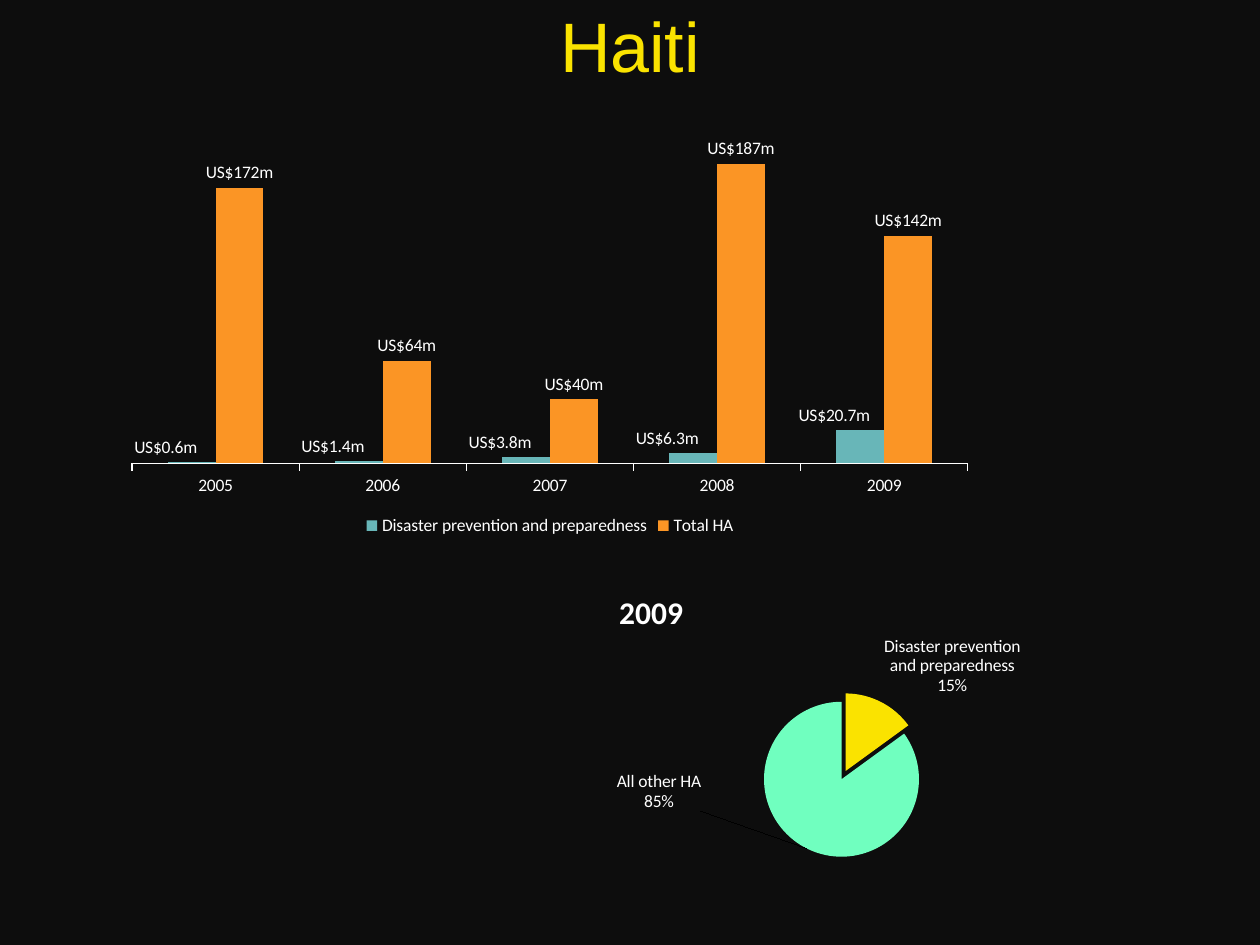
import dataclasses

import pptx
import pptx.chart.data
import pptx.dml.color
import pptx.enum.chart
import pptx.enum.text
import pptx.oxml
import pptx.oxml.ns
import pptx.util


@dataclasses.dataclass(frozen=True)
class Theme:
    background: str = "0D0D0D"
    text: str = "FFFFFF"
    accent: str = "FAE300"
    prevention: str = "68B6B8"
    total: str = "FB9525"
    other: str = "70FFBF"
    heading_font: str = "Arial"
    chart_font: str = "Calibri"
    heading_size: int = 40
    chart_title_size: int = 18
    label_size: int = 10


def rgb(code):
    return pptx.dml.color.RGBColor.from_string(code)


def paint(element, color):
    element.format.fill.solid()
    element.format.fill.fore_color.rgb = rgb(color)


def layout_xml(x, y, size=None, absolute=True):
    """Manual chart layout, in shares of the chart or as an offset."""
    parts = [("layoutTarget", "inner")] if size else []
    if absolute:
        parts += [("xMode", "edge"), ("yMode", "edge")]
    parts += [("x", x), ("y", y)]
    if size:
        parts += [("w", size[0]), ("h", size[1])]
    body = "".join(f'<c:{tag} val="{value}"/>' for tag, value in parts)
    return pptx.oxml.parse_xml(
        f'<c:layout {pptx.oxml.ns.nsdecls("c")}>'
        f"<c:manualLayout>{body}</c:manualLayout></c:layout>"
    )


def place_plot(chart, x, y, width, height):
    plot_area = chart._chartSpace.chart.plotArea
    for automatic in plot_area.findall(pptx.oxml.ns.qn("c:layout")):
        plot_area.remove(automatic)
    plot_area.insert(0, layout_xml(x, y, (width, height)))


def shift_label(labels, index, x, y):
    """Move one data label away from its default place."""
    label = labels._element._insert_dLbl_in_sequence(index)
    for old in list(label)[1:]:
        label.remove(old)
    label.append(layout_xml(x, y, absolute=False))
    for tag in ("numFmt", "txPr", "dLblPos", "showLegendKey", "showVal",
                "showCatName", "showSerName", "showPercent", "showBubbleSize",
                "separator"):
        for setting in labels._element.findall(pptx.oxml.ns.qn(f"c:{tag}")):
            label.append(pptx.oxml.parse_xml(pptx.oxml.xmlchemy.serialize_for_reading(setting)))


class Deck:
    def __init__(self, theme):
        self.theme = theme
        self.presentation = pptx.Presentation()
        self.presentation.slide_width = pptx.util.Inches(10)
        self.presentation.slide_height = pptx.util.Inches(7.5)
        self.slide = self.presentation.slides.add_slide(self.presentation.slide_layouts[6])
        paint_background = self.slide.background.fill
        paint_background.solid()
        paint_background.fore_color.rgb = rgb(theme.background)

    def box(self, x, y, width, height):
        """Turn percentages of the slide's size into lengths."""
        across, down = self.presentation.slide_width, self.presentation.slide_height
        return [int(share * side / 100) for share, side in
                zip((x, y, width, height), (across, down, across, down))]

    def style(self, font, name, size, color, bold=False):
        font.name, font.size, font.bold = name, pptx.util.Pt(size), bold
        font.color.rgb = rgb(color)

    def heading(self, wording, *area):
        frame = self.slide.shapes.add_textbox(*self.box(*area)).text_frame
        frame.word_wrap = True
        frame.vertical_anchor = pptx.enum.text.MSO_ANCHOR.MIDDLE
        frame.text = wording
        line = frame.paragraphs[0]
        line.alignment = pptx.enum.text.PP_ALIGN.CENTER
        self.style(line.runs[0].font, self.theme.heading_font,
                   self.theme.heading_size, self.theme.accent)

    def chart(self, kind, categories, series, *area):
        data = pptx.chart.data.CategoryChartData()
        data.categories = categories
        for name, values in series:
            data.add_series(name, values)
        chart = self.slide.shapes.add_chart(kind, *self.box(*area), data).chart
        self.style(chart.font, self.theme.chart_font, self.theme.label_size, self.theme.text)
        return chart

    def labels(self, series):
        labels = series.data_labels
        self.style(labels.font, self.theme.chart_font, self.theme.label_size, self.theme.text)
        labels.position = pptx.enum.chart.XL_LABEL_POSITION.OUTSIDE_END
        return labels

    def columns(self, categories, series, colors, formats, *area):
        chart = self.chart(pptx.enum.chart.XL_CHART_TYPE.COLUMN_CLUSTERED,
                           categories, series, *area)
        chart.has_title = False
        chart.has_legend = True
        chart.legend.position = pptx.enum.chart.XL_LEGEND_POSITION.BOTTOM
        chart.legend.include_in_layout = False
        place_plot(chart, 0.02, 0.02, 0.96, 0.79)
        amounts = chart.value_axis
        amounts.minimum_scale, amounts.maximum_scale = 0, 200
        amounts.has_major_gridlines = False
        amounts.visible = False
        years = chart.category_axis
        years.major_tick_mark = pptx.enum.chart.XL_TICK_MARK.OUTSIDE
        years.format.line.color.rgb = rgb(self.theme.text)
        plot = chart.plots[0]
        plot.gap_width, plot.overlap, plot.vary_by_categories = 150, 0, False
        for bars, color, number_format in zip(plot.series, colors, formats):
            paint(bars, color)
            labels = self.labels(bars)
            labels.show_value = True
            labels.number_format = number_format
            labels.number_format_is_linked = False
        return chart

    def pie(self, title, categories, values, colors, *area):
        chart = self.chart(pptx.enum.chart.XL_CHART_TYPE.PIE,
                           categories, [(title, values)], *area)
        chart.has_legend = False
        chart.has_title = True
        chart.chart_title.text_frame.text = title
        self.style(chart.chart_title.text_frame.paragraphs[0].runs[0].font,
                   self.theme.chart_font, self.theme.chart_title_size,
                   self.theme.text, bold=True)
        heading = chart.chart_title._element
        for automatic in heading.findall(pptx.oxml.ns.qn("c:layout")):
            heading.remove(automatic)
        heading.find(pptx.oxml.ns.qn("c:tx")).addnext(layout_xml(0.15, 0.14))
        place_plot(chart, 0.37, 0.45, 0.23, 0.41)
        chart.plots[0].vary_by_categories = True
        slices = chart.plots[0].series[0]
        for index, color in enumerate(colors):
            paint(slices.points[index], color)
        first = slices.points[0].format.fill._xPr.getparent()
        first.find(pptx.oxml.ns.qn("c:spPr")).addprevious(pptx.oxml.parse_xml(
            f'<c:explosion {pptx.oxml.ns.nsdecls("c")} val="12"/>'))
        labels = self.labels(slices)
        labels.show_value = False
        labels.show_category_name = labels.show_percentage = True
        size_flag = labels._element.find(pptx.oxml.ns.qn("c:showBubbleSize"))
        size_flag.addnext(pptx.oxml.parse_xml(
            f'<c:separator {pptx.oxml.ns.nsdecls("c")}>\n</c:separator>'))
        return chart


def main():
    theme = Theme()
    deck = Deck(theme)
    prevention = "Disaster prevention and preparedness"
    funding = deck.columns(
        ["2005", "2006", "2007", "2008", "2009"],
        [(prevention, (0.6, 1.4, 3.8, 6.3, 20.7)), ("Total HA", (172, 64, 40, 187, 142))],
        (theme.prevention, theme.total), ('"US$"0.0"m"', '"US$"0"m"'),
        9.1, 14.27, 69.1, 42.93)
    small_labels = funding.plots[0].series[0].data_labels
    for year in range(5):
        shift_label(small_labels, year, -0.03, 0)
    split = deck.pie("2009", [prevention, "All other HA"], (15, 85),
                     (theme.accent, theme.other), 40.6, 56.27, 54, 40)
    shift_label(split.plots[0].series[0].data_labels, 1, -0.15, -0.22)
    deck.heading("Haiti", 0, 0, 100, 9.33)
    deck.presentation.save("out.pptx")


if __name__ == "__main__":
    main()
